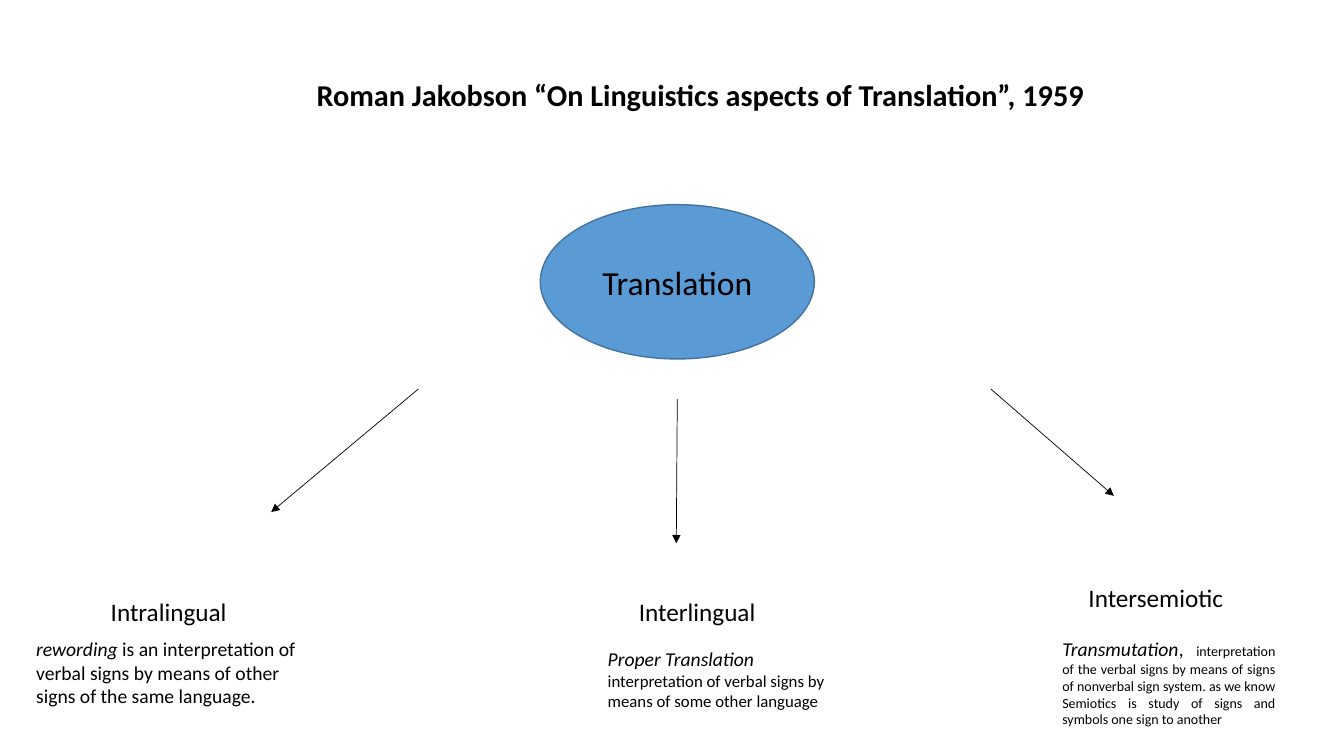
"""Builds a slide on Jakobson's three kinds of translation."""
from dataclasses import dataclass

from lxml.etree import SubElement
from pptx import Presentation
from pptx.dml.color import RGBColor
from pptx.enum.shapes import MSO_CONNECTOR, MSO_SHAPE
from pptx.enum.text import MSO_ANCHOR, PP_ALIGN
from pptx.oxml.ns import qn
from pptx.util import Pt


@dataclass(frozen=True)
class Theme:
    font: str = "Calibri"
    ink: RGBColor = RGBColor(0x00, 0x00, 0x00)
    fill: RGBColor = RGBColor(0x5B, 0x9B, 0xD5)
    edge: RGBColor = RGBColor(0x43, 0x73, 0x9E)
    title: float = 21.6
    hub: float = 24
    label: float = 18
    lead: float = 14
    body: float = 12
    small: float = 10


class SlideBuilder:
    def __init__(self, page, theme):
        self.page = page
        self.theme = theme

    def style(self, font, size, italic):
        font.name = self.theme.font
        font.size = Pt(size)
        font.color.rgb = self.theme.ink
        font.italic = italic

    def add_spans(self, para, spans, align):
        para.alignment = align
        for text, size, italic in spans:
            span = para.add_run()
            span.text = text
            target = para if len(spans) == 1 else span
            self.style(target.font, size, italic)

    def text(self, place, paragraphs, align=PP_ALIGN.LEFT, wrap=True):
        box = self.page.shapes.add_textbox(*map(Pt, place))
        frame = box.text_frame
        frame.word_wrap = wrap
        for index, spans in enumerate(paragraphs):
            para = frame.add_paragraph() if index else frame.paragraphs[0]
            self.add_spans(para, spans, align)
        return frame

    def title(self, place, text):
        spans = [(text, self.theme.title, False)]
        frame = self.text(place, [spans], PP_ALIGN.CENTER)
        frame.vertical_anchor = MSO_ANCHOR.MIDDLE
        frame.paragraphs[0].font.bold = True
        frame.paragraphs[0].line_spacing = 0.9

    def ellipse(self, place, text):
        shape = self.page.shapes.add_shape(MSO_SHAPE.OVAL, *map(Pt, place))
        shape.shadow.inherit = False
        shape.fill.solid()
        shape.fill.fore_color.rgb = self.theme.fill
        shape.line.color.rgb = self.theme.edge
        shape.line.width = Pt(1)
        frame = shape.text_frame
        frame.vertical_anchor = MSO_ANCHOR.MIDDLE
        self.add_spans(frame.paragraphs[0], [(text, self.theme.hub, False)],
                       PP_ALIGN.CENTER)

    def arrow(self, start, end):
        arrow = self.page.shapes.add_connector(
            MSO_CONNECTOR.STRAIGHT, *map(Pt, (*start, *end)))
        arrow.line.color.rgb = self.theme.ink
        arrow.line.width = Pt(0.5)
        properties = arrow.element.spPr
        SubElement(properties.find(qn("a:ln")), qn("a:tailEnd"), type="triangle")
        SubElement(properties, qn("a:effectLst"))


def main():
    deck = Presentation()
    deck.slide_width, deck.slide_height = Pt(960), Pt(540)
    theme = Theme()
    builder = SlideBuilder(deck.slides.add_slide(deck.slide_layouts[6]), theme)

    builder.title((174.2, 43.2, 652.3, 51.1),
                  "Roman Jakobson “On Linguistics aspects of Translation”, 1959")
    builder.ellipse((385.9, 146.2, 195.8, 110.2), "Translation")

    for start, end in (
        ((298.8, 277.9), (193.7, 365.8)),
        ((483.8, 285.1), (483.1, 388.1)),
        ((707.8, 277.9), (795.6, 354.2)),
    ):
        builder.arrow(start, end)

    for left, top, width, label in (
        (72, 422.6, 102.2, "Intralingual"),
        (449.3, 422.6, 103, "Interlingual"),
        (770.4, 412.6, 111.6, "Intersemiotic"),
    ):
        builder.text((left, top, width, 28.8),
                     [[(label, theme.label, False)]], wrap=False)

    builder.text((18.7, 451.4, 209.5, 58.3), [[
        ("rewording", theme.lead, True),
        (" is an interpretation of verbal signs by means of other signs"
         " of the same language.", theme.lead, False),
    ]])
    builder.text((427, 458.6, 182.2, 53.3), [
        [("Proper Translation", theme.lead, True)],
        [("interpretation of verbal signs by means of some other language",
          theme.body, False)],
    ])
    builder.text((751.7, 451.4, 166.3, 72.7), [[
        ("Transmutation", theme.lead, True),
        (", ", theme.lead, False),
        ("interpretation of the verbal signs by means of signs of nonverbal"
         " sign system. as we know Semiotics is study of signs and symbols"
         " one sign to another", theme.small, False),
    ]], PP_ALIGN.JUSTIFY)

    deck.save("out.pptx")


if __name__ == "__main__":
    main()
